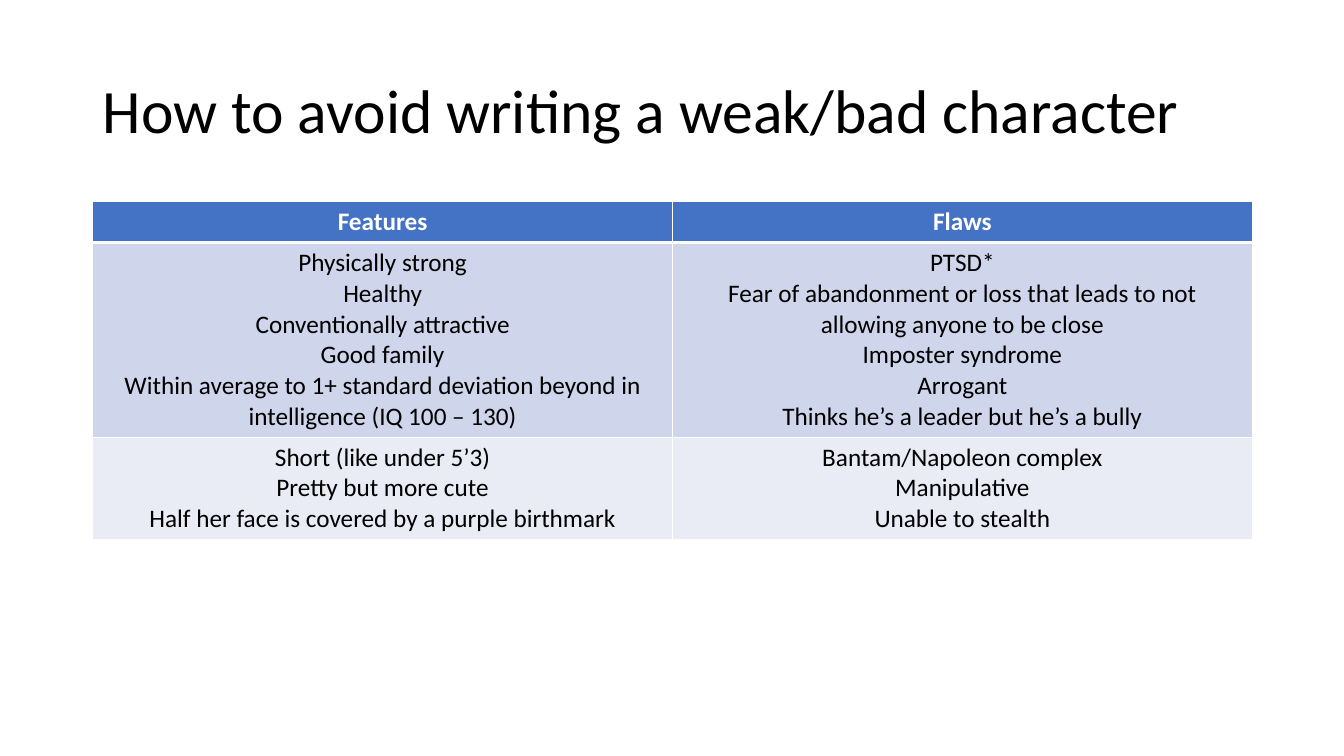
from lxml import etree
from pptx import Presentation
from pptx.dml.color import RGBColor
from pptx.enum.text import MSO_ANCHOR, PP_ALIGN
from pptx.oxml.ns import qn
from pptx.util import Inches, Pt

LEFT, CENTER = PP_ALIGN.LEFT, PP_ALIGN.CENTER
MIDDLE = MSO_ANCHOR.MIDDLE
TITLE_ONLY = 5

COLORS = {
    "text": "000000",
    "white": "FFFFFF",
    "header": "4472C4",
    "band": "CFD5EA",
    "light": "E9EBF5",
}

TRAITS = [
    (["Features"], ["Flaws"]),
    (
        [
            "Physically strong",
            "Healthy",
            "Conventionally attractive",
            "Good family",
            "Within average to 1+ standard deviation beyond in intelligence (IQ 100 – 130)",
        ],
        [
            "PTSD*",
            "Fear of abandonment or loss that leads to not allowing anyone to be close",
            "Imposter syndrome",
            "Arrogant",
            "Thinks he’s a leader but he’s a bully",
        ],
    ),
    (
        [
            "Short (like under 5’3)",
            "Pretty but more cute",
            "Half her face is covered by a purple birthmark",
        ],
        ["Bantam/Napoleon complex", "Manipulative", "Unable to stealth"],
    ),
]
ROW_FILLS = ["header", "band", "light"]
ROW_HEIGHTS = [0.4, 1.9, 1.01]


class SlideBuilder:
    font_name = "Calibri"
    left, width = 0.92, 11.5

    def __init__(self, deck):
        self.slide = deck.slides.add_slide(deck.slide_layouts[TITLE_ONLY])

    def style(self, paragraph, size, color, align, bold=False):
        paragraph.alignment = align
        font = paragraph.font
        font.name, font.size, font.bold = self.font_name, Pt(size), bold
        font.color.rgb = RGBColor.from_string(COLORS[color])

    def title(self, text, top, height):
        box = self.slide.shapes.title
        box.left, box.top = Inches(self.left), Inches(top)
        box.width, box.height = Inches(self.width), Inches(height)
        frame = box.text_frame
        frame.text = text
        frame.vertical_anchor = MIDDLE
        paragraph = frame.paragraphs[0]
        paragraph.line_spacing = 0.9
        self.style(paragraph, 44, "text", LEFT)

    def border(self, cell, side, points):
        properties = cell._tc.get_or_add_tcPr()
        line = etree.SubElement(properties, qn(f"a:ln{side}"), w=str(Pt(points)))
        fill = etree.SubElement(line, qn("a:solidFill"))
        etree.SubElement(fill, qn("a:srgbClr"), val=COLORS["white"])

    def table(self, rows, fills, heights, top):
        table = self.slide.shapes.add_table(
            len(rows), len(rows[0]), Inches(self.left), Inches(top),
            Inches(self.width), Inches(sum(heights)),
        ).table
        for row_index, (row, fill, height) in enumerate(zip(rows, fills, heights)):
            table.rows[row_index].height = Inches(height)
            for column_index, lines in enumerate(row):
                cell = table.cell(row_index, column_index)
                self.cell(cell, lines, fill, row_index)

    def cell(self, cell, lines, fill, row_index):
        is_header = row_index == 0
        top_width = 3 if row_index == 1 else 1
        bottom_width = 3 if is_header else 1
        for side, points in zip("LRTB", (1, 1, top_width, bottom_width)):
            self.border(cell, side, points)
        cell.fill.solid()
        cell.fill.fore_color.rgb = RGBColor.from_string(COLORS[fill])
        cell.text_frame.text = "\n".join(lines)
        color = "white" if is_header else "text"
        for paragraph in cell.text_frame.paragraphs:
            self.style(paragraph, 18, color, CENTER, is_header)


def main():
    deck = Presentation()
    deck.slide_width, deck.slide_height = Inches(13.33), Inches(7.5)
    page = SlideBuilder(deck)
    page.title("How to avoid writing a weak/bad character", 0.4, 1.45)
    page.table(TRAITS, ROW_FILLS, ROW_HEIGHTS, 2)
    deck.save("out.pptx")


if __name__ == "__main__":
    main()
